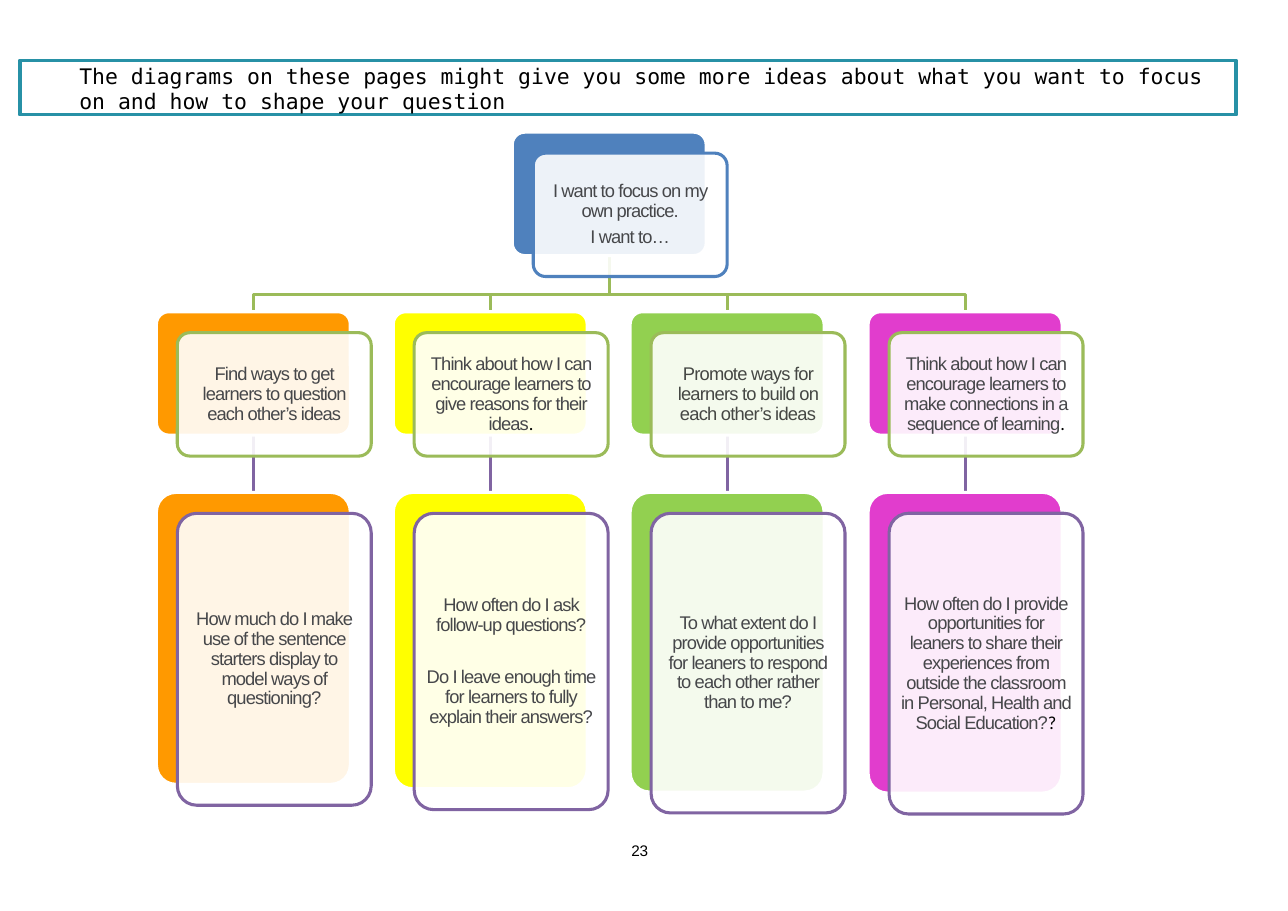
from lxml import etree
from pptx import Presentation, util as u
from pptx.dml.color import RGBColor
from pptx.enum import shapes, text
from pptx.oxml.ns import qn

PX = 9144  # 100 px to the inch

COLOURS = {
    "teal": "2791A6", "black": "000000", "white": "FFFFFF",
    "grey": "46474A", "olive_grey": "454744",
    "blue": "4F81BD", "olive": "9BBB59", "purple": "8064A2",
    "orange": "FF9900", "yellow": "FFFF00", "green": "92D050", "pink": "E13DCD",
}

# Name: font, size, colour, letter spacing in hundredths of a point
TEXT_STYLES = {
    "heading": ("DejaVu Sans Mono", 14, "black", 0),
    "page": ("Arial", 10, "black", -10),
    "body": ("Arial", 12, "grey", -60),
    "promote": ("Arial", 12, "olive_grey", -50),
    "mark": ("Calibri", 12, "black", 0),
}

CARD_WIDTH, CARD_HEIGHT, OFFSET = 176, 112, 19
ROOT_LEFT, ROOT_TOP = 465, 120
FOCUS_TOP, QUESTION_TOP = 283, 447

HEADING = ("The diagrams on these pages might give you some more ideas about "
           "what you want to focus on and how to shape your question")
ROOT = [[("I want to focus on my own practice.", "body")], [("I want to…", "body")]]

# Colour, focus paragraphs, question paragraphs, height of question card
BRANCHES = [
    ("orange",
     [[("Find ways to get learners to question each other’s ideas", "body")]],
     [[("How much do I make use of the sentence starters display to model "
        "ways of questioning?", "body")]], 265),
    ("yellow",
     [[("Think about how I can encourage learners to give reasons for their ideas",
        "body"), (".", "mark")]],
     [[("How often do I ask follow-up questions?", "body")],
      [("Do I leave enough time for learners to fully explain their answers?",
        "body")]], 269),
    ("green",
     [[("Promote ways for learners to build on each other’s ideas", "promote")]],
     [[("To what extent do I provide opportunities for leaners to respond to "
        "each other rather than to me?", "body")]], 272),
    ("pink",
     [[("Think about how I can encourage learners to make connections in a "
        "sequence of learning", "body"), (".", "mark")]],
     [[("How often do I provide opportunities for leaners to share their "
        "experiences from outside the classroom in Personal, Health and Social "
        "Education?", "body"), ("?", "mark")]], 273),
]


def px(*lengths):
    return [u.Emu(length * PX) for length in lengths]


def colour(name):
    return RGBColor.from_string(COLOURS[name])


def set_line(shape, name, width=2):
    shape.line.color.rgb = colour(name)
    shape.line.width = u.Pt(width)


def set_frame(frame, insets, anchor):
    frame.word_wrap = True
    frame.auto_size = text.MSO_AUTO_SIZE.NONE
    frame.vertical_anchor = anchor
    (frame.margin_left, frame.margin_top,
     frame.margin_right, frame.margin_bottom) = px(*insets)


def add_run(paragraph, words, style):
    name, size, ink, spacing = TEXT_STYLES[style]
    run = paragraph.add_run()
    run.text = words
    run.font.name, run.font.size = name, u.Pt(size)
    run.font.color.rgb = colour(ink)
    run._r.get_or_add_rPr().set("spc", str(spacing))


def add_heading(slide, box):
    title = slide.shapes.title
    title.left, title.top, title.width, title.height = px(*box)
    set_line(title, "teal", 2.5)
    set_frame(title.text_frame, (54, 2, 0, 0), text.MSO_ANCHOR.TOP)
    paragraph = title.text_frame.paragraphs[0]
    paragraph.alignment = text.PP_ALIGN.LEFT
    add_run(paragraph, HEADING, "heading")


def add_page_number(slide, box):
    shape = slide.shapes.add_textbox(*px(*box))
    set_frame(shape.text_frame, (3, 0, 0, 0), text.MSO_ANCHOR.TOP)
    add_run(shape.text_frame.paragraphs[0], "23", "page")


def add_panel(slide, box, fill, line):
    shape = slide.shapes.add_shape(shapes.MSO_SHAPE.ROUNDED_RECTANGLE, *px(*box))
    shape.adjustments[0] = 0.1
    shape.shadow.inherit = False
    shape.fill.solid()
    shape.fill.fore_color.rgb = colour(fill)
    set_line(shape, line)
    return shape


def add_card(slide, box, fill, line, paragraphs, gap=0):
    """Coloured panel with a translucent text panel shifted over it."""
    left, top, width, height = box
    add_panel(slide, box, fill, "white")
    front = add_panel(slide, (left + OFFSET, top + OFFSET, width, height), "white", line)
    fill_colour = front._element.spPr.find(qn("a:solidFill")).find(qn("a:srgbClr"))
    etree.SubElement(fill_colour, qn("a:alpha")).set("val", "90000")

    frame = front.text_frame
    set_frame(frame, (5, 5, 5, 5), text.MSO_ANCHOR.MIDDLE)
    for index, runs in enumerate(paragraphs):
        paragraph = frame.add_paragraph() if index else frame.paragraphs[0]
        paragraph.alignment = text.PP_ALIGN.CENTER
        paragraph.line_spacing = 0.9
        paragraph.space_after = u.Pt(4.2)
        if index:
            paragraph.space_before = u.Pt(gap)
        for words, style in runs:
            add_run(paragraph, words, style)


def add_links(slide, column_left):
    """Lines from the root to a focus card, and on to its question card."""
    centre = column_left + CARD_WIDTH // 2
    root_centre = ROOT_LEFT + CARD_WIDTH // 2
    root_bottom = ROOT_TOP + CARD_HEIGHT
    builder = slide.shapes.build_freeform(*px(root_centre, root_bottom))
    turns = [(root_centre, 267), (centre, 267), (centre, FOCUS_TOP)]
    builder.add_line_segments([px(*turn) for turn in turns], close=False)
    branch = builder.convert_to_shape()
    branch.shadow.inherit = False
    branch.fill.background()
    set_line(branch, "olive")

    stem = slide.shapes.add_connector(
        shapes.MSO_CONNECTOR.STRAIGHT,
        *px(centre, FOCUS_TOP + CARD_HEIGHT, centre, QUESTION_TOP))
    set_line(stem, "purple")
    etree.SubElement(stem._element.spPr, qn("a:effectLst"))


def add_diagram(slide, left):
    columns = [left + 646 * index // 3 for index in range(len(BRANCHES))]
    # Links lie behind every card
    for column in columns:
        add_links(slide, column)
    add_card(slide, (ROOT_LEFT, ROOT_TOP, CARD_WIDTH, CARD_HEIGHT),
             "blue", "blue", ROOT)
    for column, (fill, focus, question, height) in zip(columns, BRANCHES):
        add_card(slide, (column, FOCUS_TOP, CARD_WIDTH, CARD_HEIGHT),
                 fill, "olive", focus)
        add_card(slide, (column, QUESTION_TOP, CARD_WIDTH, height),
                 fill, "purple", question, gap=17)


def main():
    presentation = Presentation()
    presentation.slide_width, presentation.slide_height = px(1169, 827)
    slide = presentation.slides.add_slide(presentation.slide_layouts[5])
    add_heading(slide, (18, 55, 1104, 49))
    add_page_number(slide, (570, 764, 23, 17))
    add_diagram(slide, 142)
    presentation.save("out.pptx")


if __name__ == "__main__":
    main()
